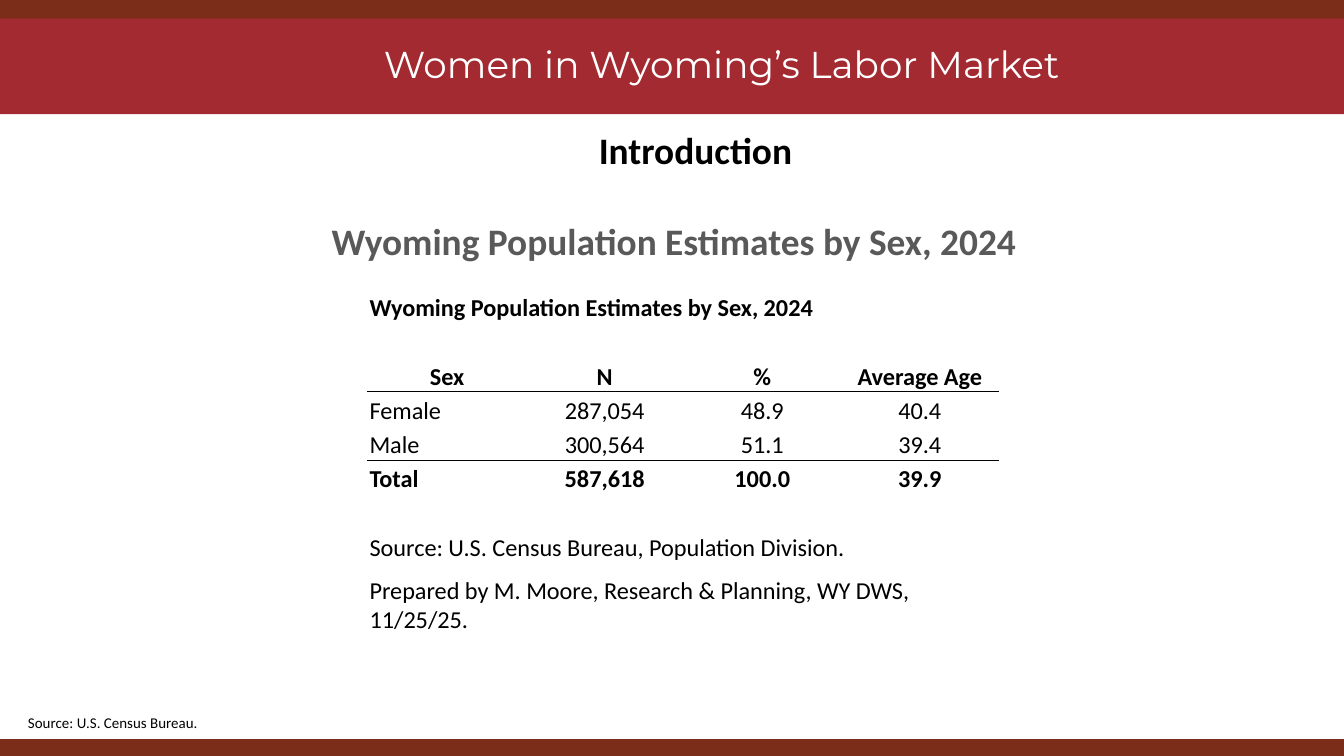
from dataclasses import dataclass

import pptx
import pptx.dml.color
import pptx.enum.shapes
import pptx.enum.text
import pptx.oxml
import pptx.oxml.ns
import pptx.util
from pptx.dml.color import RGBColor
from pptx.util import Inches, Pt

BLACK = RGBColor(0x00, 0x00, 0x00)
WHITE = RGBColor(0xFF, 0xFF, 0xFF)
GRAY = RGBColor(0x59, 0x59, 0x59)
BROWN = RGBColor(0x7B, 0x2D, 0x19)
RED = RGBColor(0xA2, 0x2A, 0x30)

ALIGN = pptx.enum.text.PP_ALIGN
ANCHOR = pptx.enum.text.MSO_ANCHOR

COLUMNS = 4
TABLE_HEIGHT = 2.58
LAST_ROW_HEIGHT = 0.54


@dataclass
class Band:
    top: float
    height: float
    color: RGBColor


@dataclass
class Line:
    text: str
    size: float = 20
    color: RGBColor = BLACK
    bold: bool = False
    font: str = "Calibri"
    align: ALIGN = ALIGN.CENTER
    indent: float = 0
    space_before: float = 0


@dataclass
class TextBox:
    left: float
    top: float
    width: float
    height: float
    lines: list[Line]
    anchor: ANCHOR = ANCHOR.TOP
    inset_y: float = 0.1


@dataclass
class Row:
    texts: list[str]
    bold: bool = False
    first_align: ALIGN = ALIGN.LEFT
    rule: str = ""


BANDS = [
    Band(5.5, 0.19, BROWN),
    Band(-0.02, 0.87, RED),
    Band(-0.02, 0.16, BROWN),
    Band(5.53, 0.16, BROWN),
]

BOXES = [
    TextBox(0.27, 0.85, 9.37, 4.27, [
        Line("Introduction", bold=True, indent=0.44),
        Line("Wyoming Population Estimates by Sex, 2024", color=GRAY, bold=True,
             indent=0.12, space_before=24.4),
    ]),
    TextBox(1.62, 0.16, 7.5, 0.58, [
        Line("Women in Wyoming’s Labor Market", color=WHITE, font="Montserrat"),
    ], ANCHOR.BOTTOM),
    TextBox(0.11, 5.26, 6.35, 0.24, [
        Line("Source: U.S. Census Bureau.", size=8, align=ALIGN.LEFT),
    ], inset_y=0.05),
]

ROWS = [
    Row(["Wyoming Population Estimates by Sex, 2024"], bold=True),
    Row([""] * COLUMNS),
    Row(["Sex", "N", "%", "Average Age"], bold=True, first_align=ALIGN.CENTER, rule="lnB"),
    Row(["Female", "287,054", "48.9", "40.4"], rule="lnT"),
    Row(["Male", "300,564", "51.1", "39.4"], rule="lnB"),
    Row(["Total", "587,618", "100.0", "39.9"], bold=True, rule="lnT"),
    Row([""] * COLUMNS),
    Row(["Source: U.S. Census Bureau, Population Division."]),
    Row(["Prepared by M. Moore, Research & Planning, WY DWS, 11/25/25."]),
]


def set_all(target, values: dict) -> None:
    for name, value in values.items():
        setattr(target, name, value)


def write_line(p, line: Line) -> None:
    p.alignment = line.align
    if line.indent:
        p._p.get_or_add_pPr().set("marL", str(Inches(line.indent)))
    if line.space_before:
        p.space_before = Pt(line.space_before)
    if not line.text:
        # An empty cell keeps its row low only if its end mark is small.
        end = pptx.oxml.parse_xml(
            f'<a:endParaRPr {pptx.oxml.ns.nsdecls("a")} sz="{int(line.size * 100)}"/>')
        p._p.append(end)
        return
    r = p.add_run()
    r.text = line.text
    set_all(r.font, {"name": line.font, "size": Pt(line.size), "bold": line.bold})
    r.font.color.rgb = line.color


def add_band(s, band: Band) -> None:
    sp = s.shapes.add_shape(pptx.enum.shapes.MSO_SHAPE.RECTANGLE, Inches(-0.02),
                            Inches(band.top), Inches(10.05), Inches(band.height))
    sp.shadow.inherit = False
    sp.fill.solid()
    sp.fill.fore_color.rgb = band.color
    sp.line.fill.background()


def add_text(s, box: TextBox) -> None:
    sp = s.shapes.add_textbox(Inches(box.left), Inches(box.top),
                              Inches(box.width), Inches(box.height))
    tf = sp.text_frame
    set_all(tf, {
        "word_wrap": True, "vertical_anchor": box.anchor,
        "margin_left": Inches(0.1), "margin_right": Inches(0.1),
        "margin_top": Inches(box.inset_y), "margin_bottom": Inches(box.inset_y),
    })
    for i, line in enumerate(box.lines):
        write_line(tf.add_paragraph() if i else tf.paragraphs[0], line)


def add_rule(cell, side: str) -> None:
    """Draw a thin black border on one side: lnT or lnB."""
    border = pptx.oxml.parse_xml(
        f'<a:{side} {pptx.oxml.ns.nsdecls("a")} w="{Pt(0.5)}"><a:solidFill>'
        f'<a:srgbClr val="{BLACK}"/></a:solidFill></a:{side}>')
    cell._tc.get_or_add_tcPr().insert(0, border)


def add_population_table(s) -> None:
    table = s.shapes.add_table(len(ROWS), COLUMNS, Inches(2.74), Inches(2.15),
                               Inches(4.69), Inches(TABLE_HEIGHT)).table
    set_all(table, {"first_row": False, "horz_banding": False})
    row_height = (TABLE_HEIGHT - LAST_ROW_HEIGHT) / (len(ROWS) - 1)
    for i, row in enumerate(ROWS):
        is_last = i == len(ROWS) - 1
        table.rows[i].height = Inches(LAST_ROW_HEIGHT if is_last else row_height)
        if len(row.texts) == 1:
            table.cell(i, 0).merge(table.cell(i, COLUMNS - 1))
        for j in range(COLUMNS):
            cell = table.cell(i, j)
            cell.fill.background()
            set_all(cell, {
                "vertical_anchor": ANCHOR.BOTTOM, "margin_left": Inches(0.01),
                "margin_right": Inches(0.01), "margin_top": Inches(0.01),
                "margin_bottom": 0,
            })
            text = row.texts[j] if j < len(row.texts) else ""
            align = ALIGN.CENTER if j else row.first_align
            write_line(cell.text_frame.paragraphs[0],
                       Line(text, size=13, bold=row.bold, align=align))
            if row.rule:
                add_rule(cell, row.rule)


def main() -> None:
    prs = pptx.Presentation()
    width = Inches(10)
    set_all(prs, {"slide_width": width, "slide_height": width * 9 // 16})
    s = prs.slides.add_slide(prs.slide_layouts[6])
    for band in BANDS:
        add_band(s, band)
    *headings, footnote = BOXES
    for box in headings:
        add_text(s, box)
    add_population_table(s)
    add_text(s, footnote)
    prs.save("out.pptx")


if __name__ == "__main__":
    main()
